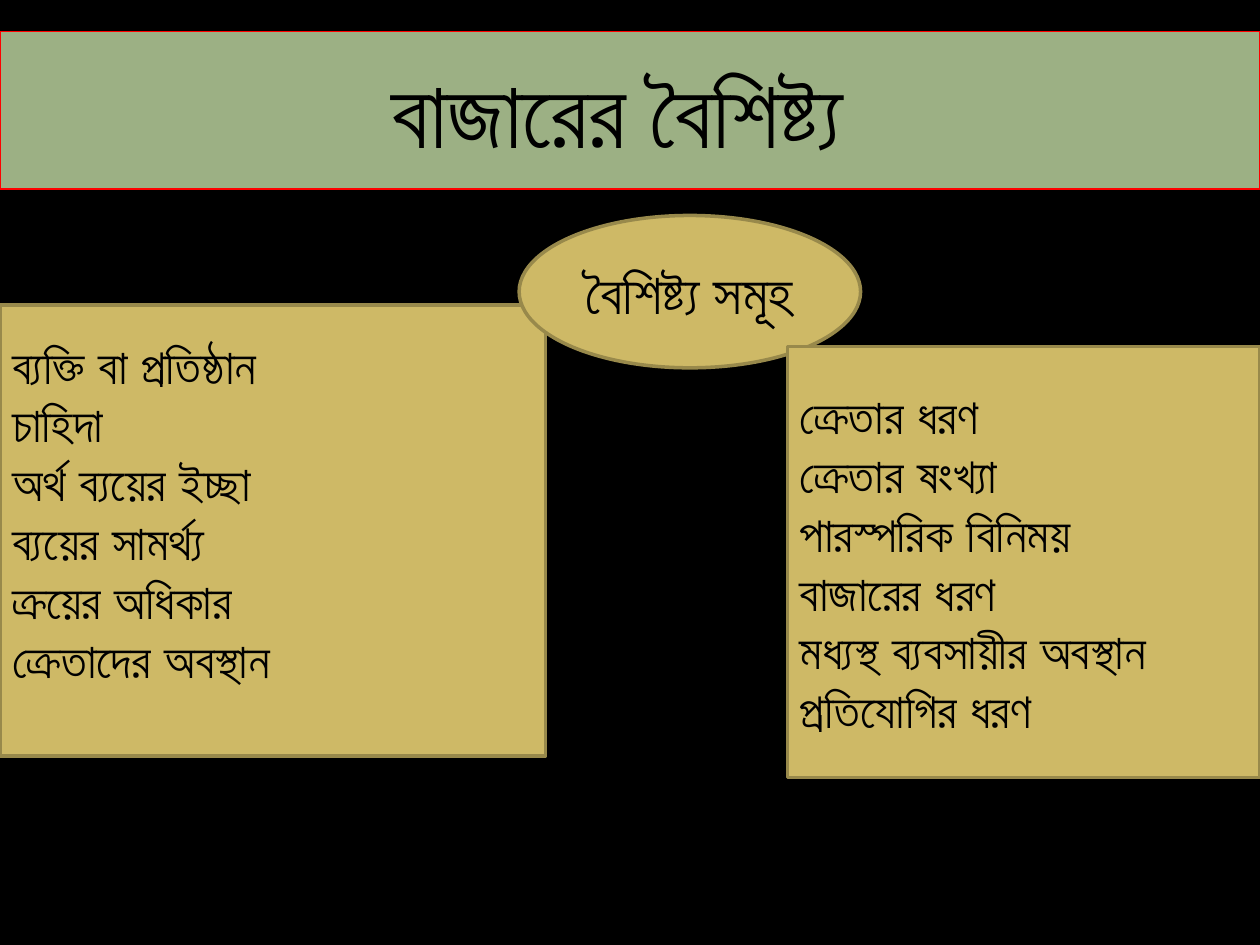
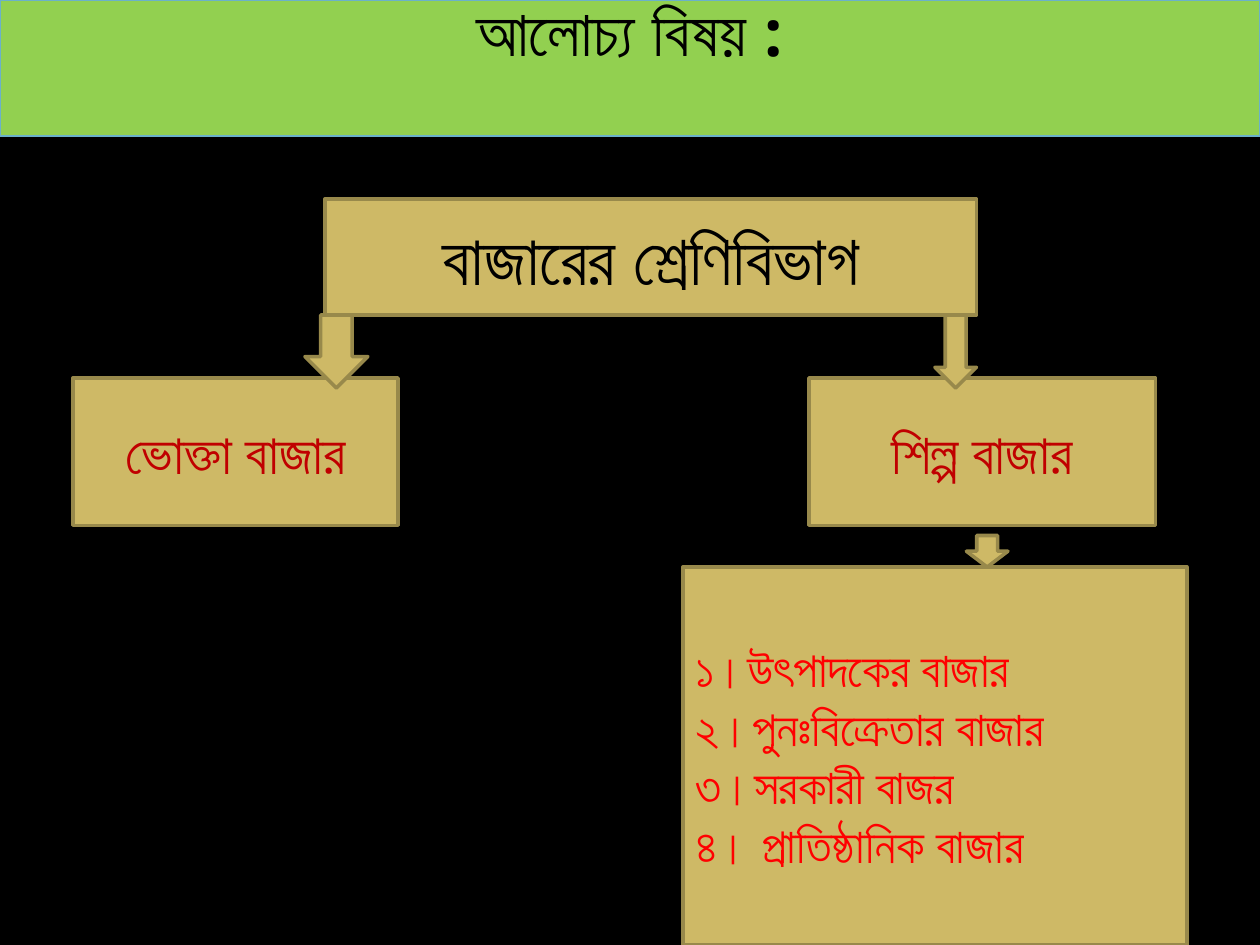
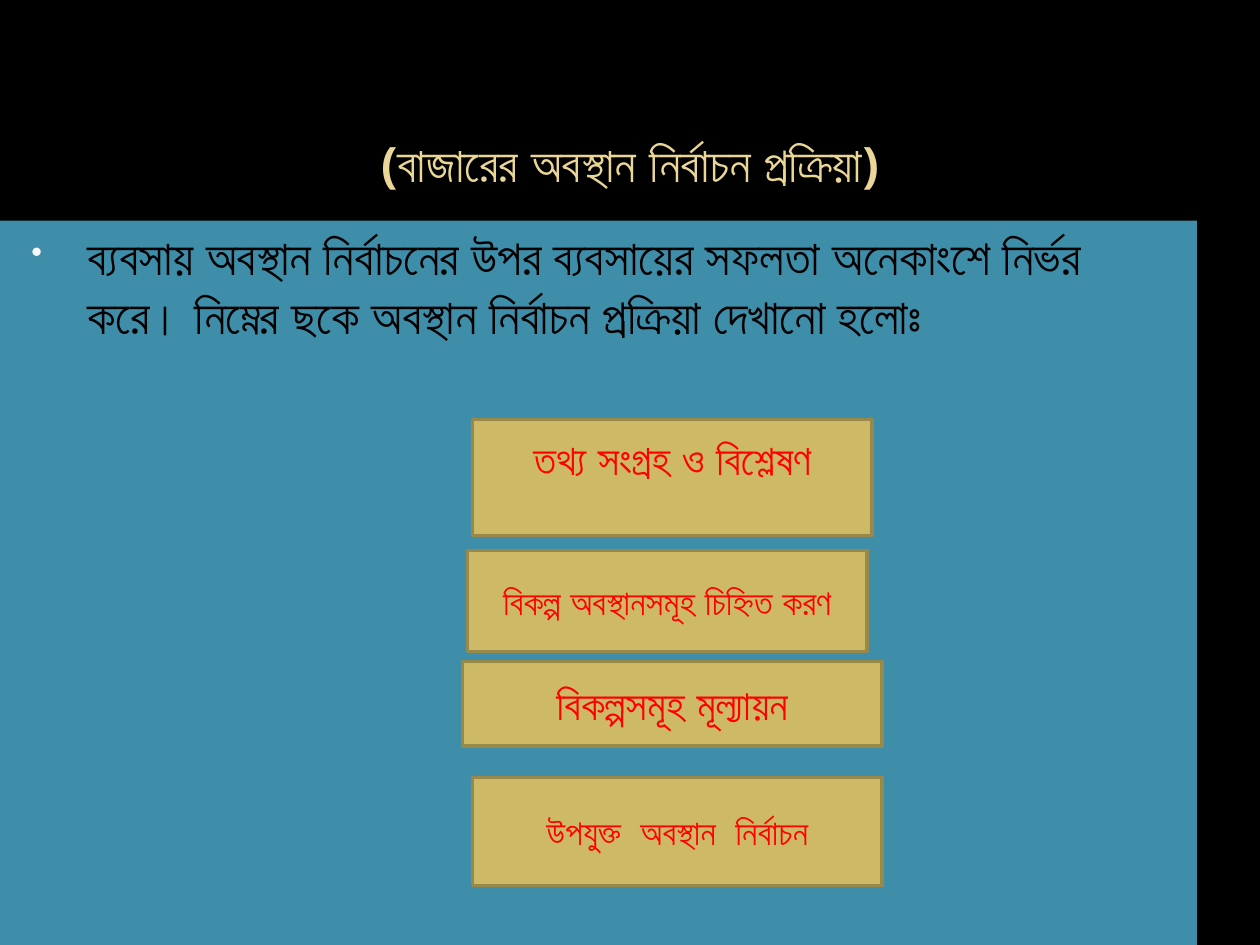
import pptx
import pptx.util
import pptx.dml.color
import pptx.enum.shapes
import pptx.enum.text
import lxml.etree

Inches = pptx.util.Inches
Pt = pptx.util.Pt
RGBColor = pptx.dml.color.RGBColor
MSO_SHAPE = pptx.enum.shapes.MSO_SHAPE
PP_ALIGN = pptx.enum.text.PP_ALIGN
MSO_ANCHOR = pptx.enum.text.MSO_ANCHOR

BLACK = RGBColor(0x00, 0x00, 0x00)
RED = RGBColor(0xFF, 0x00, 0x00)
DARK_RED = RGBColor(0xC0, 0x00, 0x00)
GOLD = RGBColor(0xCE, 0xB9, 0x66)
GOLD_EDGE = RGBColor(0x98, 0x89, 0x4B)
PALE_GOLD = RGBColor(0xEA, 0xD6, 0x96)
SAGE = RGBColor(0x9C, 0xB0, 0x84)
GREEN = RGBColor(0x92, 0xD0, 0x50)
SKY = RGBColor(0x6B, 0xB1, 0xC9)
TEAL = RGBColor(0x3E, 0x8E, 0xA9)
TITLE_FONT = "Open Sans"
BODY_FONT = "TeX Gyre Pagella"


def add_box(s, x, y, w, h, kind=MSO_SHAPE.RECTANGLE, fill=GOLD, edge=GOLD_EDGE, weight=2):
    sp = s.shapes.add_shape(kind, Inches(x), Inches(y), Inches(w), Inches(h))
    sp.shadow.inherit = False
    if fill is None:
        sp.fill.background()
    else:
        sp.fill.solid()
        sp.fill.fore_color.rgb = fill
    if edge is None:
        sp.line.fill.background()
    else:
        sp.line.color.rgb = edge
        sp.line.width = Pt(weight)
    return sp


def set_text(sp, text, size=28, color=BLACK, font=BODY_FONT, bold=False,
             align=PP_ALIGN.CENTER, anchor=MSO_ANCHOR.MIDDLE, top=0.05, bottom=0.05, right=0.1):
    tf = sp.text_frame
    tf.word_wrap = True
    tf.vertical_anchor = anchor
    tf.margin_top, tf.margin_bottom = Inches(top), Inches(bottom)
    tf.margin_right = Inches(right)
    for i, line in enumerate(text.split("\n")):
        p = tf.paragraphs[0] if i == 0 else tf.add_paragraph()
        p.alignment = align
        r = p.add_run()
        r.text = line
        r.font.name = font
        r.font.size = Pt(size)
        r.font.bold = bold
        r.font.color.rgb = color


prs = pptx.Presentation()
prs.slide_width = Inches(10)
prs.slide_height = Inches(7.5)
slides = []
for _ in range(3):
    s = prs.slides.add_slide(prs.slide_layouts[6])
    s.background.fill.solid()
    s.background.fill.fore_color.rgb = BLACK
    slides.append(s)
features, classes, process = slides

title = add_box(features, 0, 0.25, 10, 1.25, fill=SAGE, edge=RED, weight=0.75)
set_text(title, "বাজারের বৈশিষ্ট্য", size=54, font=TITLE_FONT, bold=True, right=0.3)
buyers = add_box(features, 0, 2.42, 4.33, 3.58)
set_text(buyers, """ব্যক্তি বা প্রতিষ্ঠান
চাহিদা
অর্থ ব্যয়ের ইচ্ছা
ব্যয়ের সামর্থ্য
ক্রয়ের অধিকার
ক্রেতাদের অবস্থান""", bold=True, align=PP_ALIGN.LEFT, bottom=0.35)
hub = add_box(features, 4.12, 1.71, 2.71, 1.21, kind=MSO_SHAPE.OVAL)
set_text(hub, "বৈশিষ্ট্য সমূহ", size=32)
market = add_box(features, 6.25, 2.75, 3.75, 3.42)
set_text(market, """ক্রেতার ধরণ
ক্রেতার ষংখ্যা
পারস্পরিক বিনিময়
বাজারের ধরণ
মধ্যস্থ ব্যবসায়ীর অবস্থান
প্রতিযোগির ধরণ""", bold=True, align=PP_ALIGN.LEFT)

title = add_box(classes, 0, 0, 10, 1.08, fill=GREEN, edge=SKY, weight=0.75)
set_text(title, "আলোচ্য বিষয় :", size=36.9, font=TITLE_FONT, bold=True, bottom=0.64)
for text, x, y, w, h, size, color in [
    ("বাজারের শ্রেণিবিভাগ", 2.58, 1.58, 5.17, 0.92, 40, BLACK),
    ("ভোক্তা বাজার", 0.58, 3, 2.58, 1.17, 32, DARK_RED),
    ("শিল্প বাজার", 6.42, 3, 2.75, 1.17, 32, DARK_RED),
]:
    set_text(add_box(classes, x, y, w, h), text, size=size, color=color)
for x, y, w, h in [(2.42, 2.5, 0.5, 0.58), (7.42, 2.5, 0.33, 0.58), (7.67, 4.25, 0.33, 0.25)]:
    add_box(classes, x, y, w, h, kind=MSO_SHAPE.DOWN_ARROW)
industrial = add_box(classes, 5.42, 4.5, 4, 3)
set_text(industrial, """১।উৎপাদকের বাজার
২।পুনঃবিক্রেতার বাজার
৩।সরকারী বাজর
৪। প্রাতিষ্ঠানিক বাজার""", color=RED, align=PP_ALIGN.LEFT)

title = add_box(process, 0.5, 0.3, 9, 1.25, fill=None, edge=None)
set_text(title, "(বাজারের অবস্থান নির্বাচন প্রক্রিয়া)", size=27.9, color=PALE_GOLD,
         font=TITLE_FONT, bold=True, top=0.79)
intro = add_box(process, 0, 1.75, 9.5, 5.75, fill=TEAL, edge=None)
set_text(intro, "ব্যবসায় অবস্থান নির্বাচনের উপর ব্যবসায়ের সফলতা অনেকাংশে নির্ভর করে। "
         "নিম্নের ছকে অবস্থান নির্বাচন প্রক্রিয়া দেখানো হলোঃ",
         align=PP_ALIGN.LEFT, anchor=MSO_ANCHOR.TOP)
p = intro.text_frame.paragraphs[0]
p.space_before = Pt(5.6)
pPr = p._p.get_or_add_pPr()
pPr.set("marL", str(Inches(0.6)))
pPr.set("indent", str(Inches(-0.45)))
ns = "{http://schemas.openxmlformats.org/drawingml/2006/main}"
buClr = lxml.etree.SubElement(pPr, ns + "buClr")
lxml.etree.SubElement(buClr, ns + "srgbClr", val="F9F9F9")
lxml.etree.SubElement(pPr, ns + "buSzPct", val="65000")
lxml.etree.SubElement(pPr, ns + "buChar", char="•")

for text, x, y, w, h, size, bottom in [
    ("তথ্য সংগ্রহ ও বিশ্লেষণ", 3.75, 3.33, 3.17, 0.92, 24, 0.35),
    ("বিকল্প অবস্থানসমূহ চিহ্নিত করণ", 3.71, 4.37, 3.17, 0.8, 20, 0.05),
    ("বিকল্পসমূহ মূল্যায়ন", 3.67, 5.25, 3.33, 0.67, 24, 0.05),
    ("উপযুক্ত  অবস্থান  নির্বাচন", 3.75, 6.17, 3.25, 0.86, 20, 0.05),
]:
    set_text(add_box(process, x, y, w, h), text, size=size, color=RED, bold=True, bottom=bottom)

prs.save("out.pptx")
